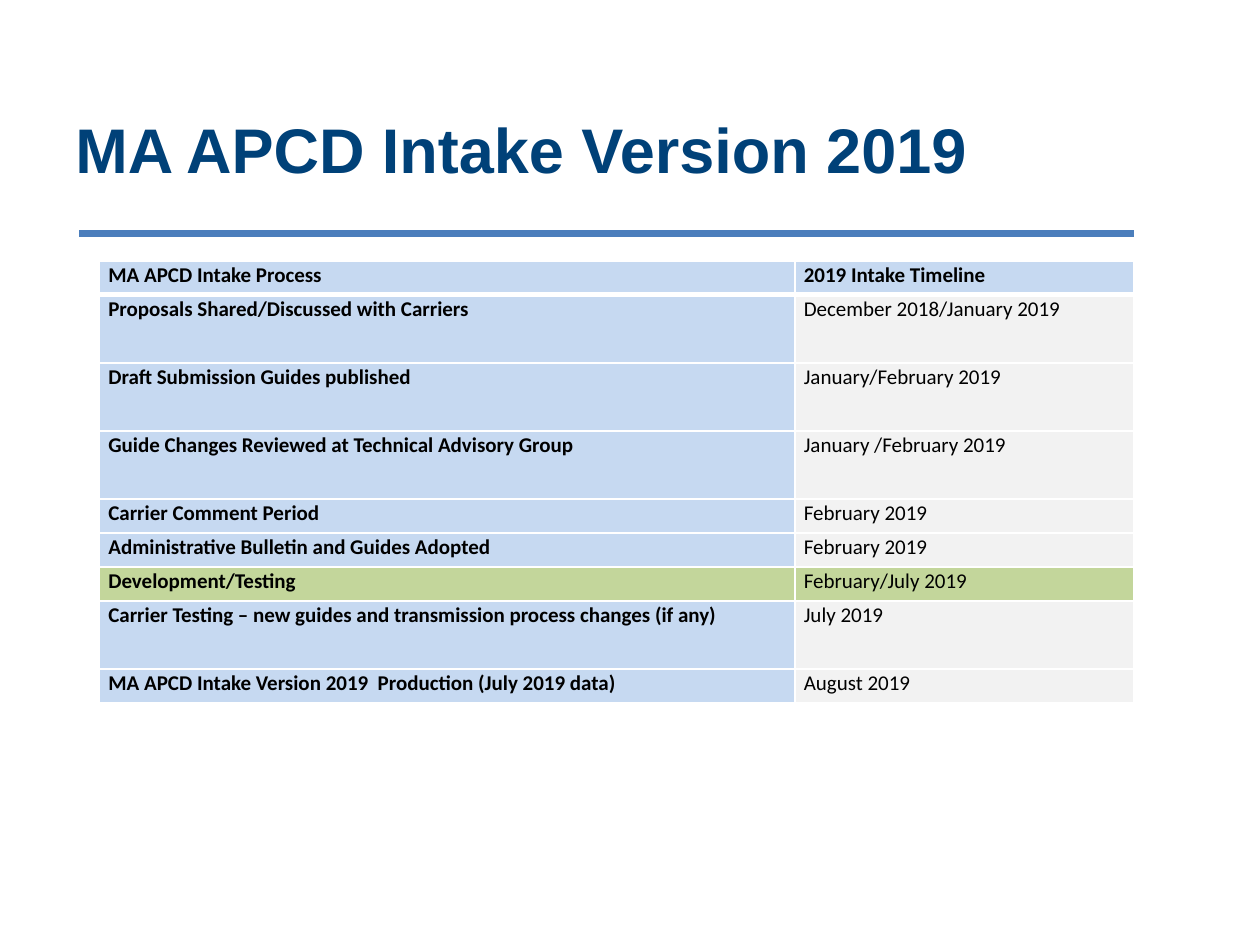
"""Build the intake timeline slide."""
from lxml.etree import SubElement
from pptx import Presentation
from pptx.dml.color import RGBColor
from pptx.enum.shapes import MSO_CONNECTOR
from pptx.enum.text import MSO_ANCHOR
from pptx.oxml.ns import qn
from pptx.util import Inches, Pt

TITLE = "MA APCD Intake Version 2019"
HEADER = ("MA APCD Intake Process", "2019 Intake Timeline")
SINGLE, DOUBLE = 0.27, 0.54
STEPS = [
    ("Proposals Shared/Discussed with Carriers", "December 2018/January 2019", DOUBLE),
    ("Draft Submission Guides published", "January/February 2019", DOUBLE),
    ("Guide Changes Reviewed at Technical Advisory Group", "January /February 2019", DOUBLE),
    ("Carrier Comment Period", "February 2019", SINGLE),
    ("Administrative Bulletin and Guides Adopted", "February 2019", SINGLE),
    ("Development/Testing", "February/July 2019", SINGLE),
    ("Carrier Testing – new guides and transmission process changes (if any)", "July 2019", DOUBLE),
    ("MA APCD Intake Version 2019  Production (July 2019 data)", "August 2019", SINGLE),
]
HIGHLIGHTED_STEP = "Development/Testing"
COLUMN_WIDTHS = (5.52, 2.69)
BLUE, GRAY, GREEN, WHITE = "C6D9F1", "F2F2F2", "C3D69B", "FFFFFF"


def color(hex_string):
    return RGBColor.from_string(hex_string)


def add_run(paragraph, text, font_name, size, hex_string, bold):
    run = paragraph.add_run()
    run.text = text
    run.font.name = font_name
    run.font.size = Pt(size)
    run.font.bold = bold
    run.font.color.rgb = color(hex_string)


def add_borders(cell, bottom_width):
    properties = cell._tc.get_or_add_tcPr()
    for side, width in (("L", 1), ("R", 1), ("T", 1), ("B", bottom_width)):
        line = SubElement(properties, qn(f"a:ln{side}"), w=str(Pt(width)))
        fill = SubElement(line, qn("a:solidFill"))
        SubElement(fill, qn("a:srgbClr"), val=WHITE)


def fill_cell(cell, text, fill, bold, bottom_width):
    add_borders(cell, bottom_width)
    cell.fill.solid()
    cell.fill.fore_color.rgb = color(fill)
    cell.margin_left = cell.margin_right = Inches(0.07)
    cell.margin_top = cell.margin_bottom = 0
    cell.vertical_anchor = MSO_ANCHOR.TOP
    paragraph = cell.text_frame.paragraphs[0]
    paragraph.line_spacing = 1.07
    add_run(paragraph, text, "Calibri", 12, "000000", bold)


def add_title(slide):
    box = slide.shapes.add_textbox(Inches(0.5), Inches(0.62), Inches(8.5), Inches(1.11))
    frame = box.text_frame
    frame.word_wrap = True
    frame.vertical_anchor = MSO_ANCHOR.MIDDLE
    add_run(frame.paragraphs[0], TITLE, "Arial", 36, "004178", True)


def add_rule(slide):
    rule = slide.shapes.add_connector(
        MSO_CONNECTOR.STRAIGHT, Inches(0.63), Inches(1.85), Inches(9), Inches(1.85))
    rule.line.color.rgb = color("4B7EBC")
    rule.line.width = Pt(4)
    SubElement(rule._element.spPr, qn("a:effectLst"))


def add_timeline(slide):
    rows = [(*HEADER, SINGLE), *STEPS]
    height = sum(row[2] for row in rows)
    table = slide.shapes.add_table(
        len(rows), len(COLUMN_WIDTHS), Inches(0.79), Inches(2.07),
        Inches(sum(COLUMN_WIDTHS)), Inches(height)).table
    table.horz_banding = False
    for column, width in zip(table.columns, COLUMN_WIDTHS):
        column.width = Inches(width)
    for index, (step, period, row_height) in enumerate(rows):
        table.rows[index].height = Inches(row_height)
        is_header = index == 0
        fills = (BLUE, BLUE if is_header else GRAY)
        if step == HIGHLIGHTED_STEP:
            fills = (GREEN, GREEN)
        bottom_width = 3 if is_header else 1
        fill_cell(table.cell(index, 0), step, fills[0], True, bottom_width)
        fill_cell(table.cell(index, 1), period, fills[1], is_header, bottom_width)


def main():
    presentation = Presentation()
    presentation.slide_width = Inches(10)
    presentation.slide_height = Inches(7.5)
    slide = presentation.slides.add_slide(presentation.slide_layouts[6])
    add_rule(slide)
    add_title(slide)
    add_timeline(slide)
    presentation.save("out.pptx")


if __name__ == "__main__":
    main()
